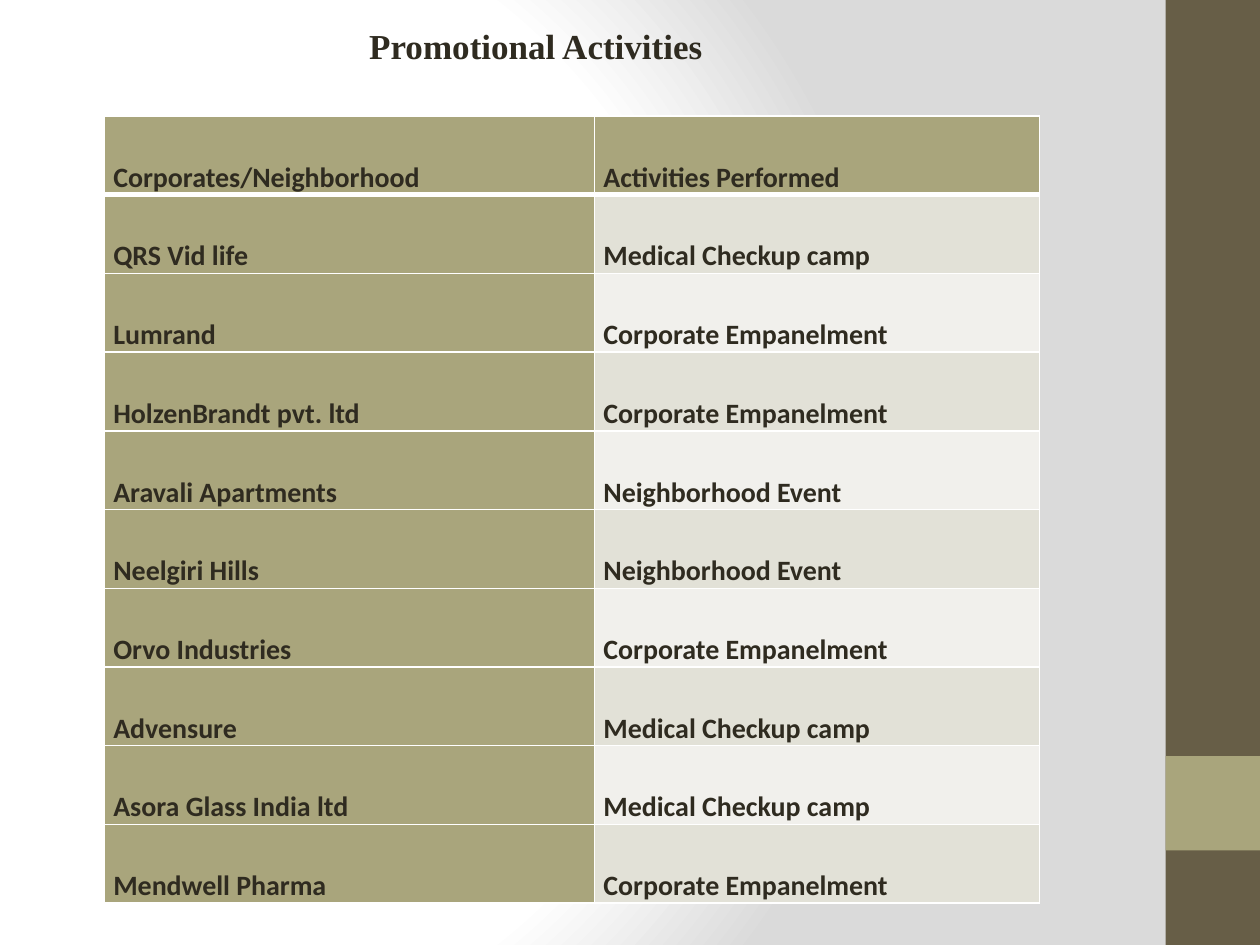
from dataclasses import dataclass

from lxml.etree import SubElement
from pptx import Presentation
from pptx.dml.color import RGBColor
from pptx.enum.shapes import MSO_SHAPE
from pptx.enum.text import MSO_ANCHOR, PP_ALIGN
from pptx.oxml import parse_xml
from pptx.oxml.ns import nsdecls, qn
from pptx.util import Inches, Pt


@dataclass(frozen=True)
class Theme:
    ink: str = "2F2B20"
    brown: str = "675E47"
    olive: str = "A9A57C"
    band_dark: str = "E2E1D7"
    band_light: str = "F1F0EC"
    white: str = "FFFFFF"
    grey: str = "DADADA"
    title_font: str = "Times New Roman"
    table_font: str = "Calibri"
    title_size: int = 20
    table_size: int = 16


THEME = Theme()

ACTIVITIES = [
    ("Corporates/Neighborhood", "Activities Performed"),
    ("QRS Vid life", "Medical Checkup camp"),
    ("Lumrand", "Corporate Empanelment"),
    ("HolzenBrandt pvt. ltd", "Corporate Empanelment"),
    ("Aravali Apartments", "Neighborhood Event"),
    ("Neelgiri Hills", "Neighborhood Event"),
    ("Orvo Industries", "Corporate Empanelment"),
    ("Advensure", "Medical Checkup camp"),
    ("Asora Glass India ltd", "Medical Checkup camp"),
    ("Mendwell Pharma", "Corporate Empanelment"),
]


def write_text(frame, text, *, font, size, color=THEME.ink, bold=True,
               anchor=MSO_ANCHOR.MIDDLE, spacing=1.0):
    frame.vertical_anchor = anchor
    paragraph = frame.paragraphs[0]
    paragraph.alignment = PP_ALIGN.LEFT
    paragraph.line_spacing = spacing
    run = paragraph.add_run()
    run.text = text
    run.font.name = font
    run.font.size = Pt(size)
    run.font.bold = bold
    run.font.color.rgb = RGBColor.from_string(color)


def paint_background(slide):
    slide.background.fill.solid()
    solid = slide.background._cSld.find(".//" + qn("a:solidFill"))
    stops = "".join(
        f'<a:gs pos="{position * 1000}"><a:srgbClr val="{color}"/></a:gs>'
        for position, color in ((0, THEME.white), (75, THEME.white), (100, THEME.grey))
    )
    gradient = parse_xml(
        f'<a:gradFill {nsdecls("a")} rotWithShape="1"><a:gsLst>{stops}</a:gsLst>'
        '<a:path path="circle">'
        '<a:fillToRect l="20000" t="50000" r="100000" b="50000"/>'
        '</a:path></a:gradFill>'
    )
    solid.getparent().replace(solid, gradient)


def add_block(slide, left, top, width, height, color):
    block = slide.shapes.add_shape(
        MSO_SHAPE.RECTANGLE, Inches(left), Inches(top), Inches(width), Inches(height)
    )
    block.shadow.inherit = False
    block.fill.solid()
    block.fill.fore_color.rgb = RGBColor.from_string(color)
    block.line.fill.background()


def add_title(slide, text):
    title = slide.shapes.title
    title.left, title.top = Inches(2.83), Inches(0.12)
    title.width, title.height = Inches(2.86), Inches(0.48)
    title.text_frame.word_wrap = False
    write_text(title.text_frame, text, font=THEME.title_font, size=THEME.title_size)


def set_border(cell, side, width):
    line = SubElement(cell._tc.get_or_add_tcPr(), qn(f"a:ln{side}"), w=str(Pt(width)))
    fill = SubElement(line, qn("a:solidFill"))
    SubElement(fill, qn("a:srgbClr"), val=THEME.white)


def cell_color(row, column):
    if row == 0 or column == 0:
        return THEME.olive
    return THEME.band_dark if row % 2 else THEME.band_light


def format_cell(cell, text, row, column):
    cell.margin_left = cell.margin_right = Inches(0.07)
    cell.margin_top = cell.margin_bottom = 0
    for side in "LRTB":
        under_header = (row, side) in ((0, "B"), (1, "T"))
        set_border(cell, side, 3 if under_header else 1)
    cell.fill.solid()
    cell.fill.fore_color.rgb = RGBColor.from_string(cell_color(row, column))
    write_text(cell.text_frame, text, font=THEME.table_font, size=THEME.table_size,
               spacing=1.15)
    cell.vertical_anchor = MSO_ANCHOR.BOTTOM


def add_activity_table(slide, records, height=6.25, widths=(3.89, 3.53)):
    frame = slide.shapes.add_table(
        len(records), len(widths), Inches(0.83), Inches(0.92),
        Inches(sum(widths)), Inches(height)
    )
    table = frame.table
    for column, width in zip(table.columns, widths):
        column.width = Inches(width)
    for row, record in enumerate(records):
        table.rows[row].height = Inches(height / len(records))
        for column, text in enumerate(record):
            format_cell(table.cell(row, column), text, row, column)


def main():
    presentation = Presentation()
    presentation.slide_width, presentation.slide_height = Inches(10), Inches(7.5)
    slide = presentation.slides.add_slide(presentation.slide_layouts[5])
    paint_background(slide)
    add_block(slide, 9.25, 0, 0.75, 7.5, THEME.brown)
    add_block(slide, 9.25, 6, 0.75, 0.75, THEME.olive)
    add_activity_table(slide, ACTIVITIES)
    add_title(slide, "Promotional Activities")
    presentation.save("out.pptx")


if __name__ == "__main__":
    main()
